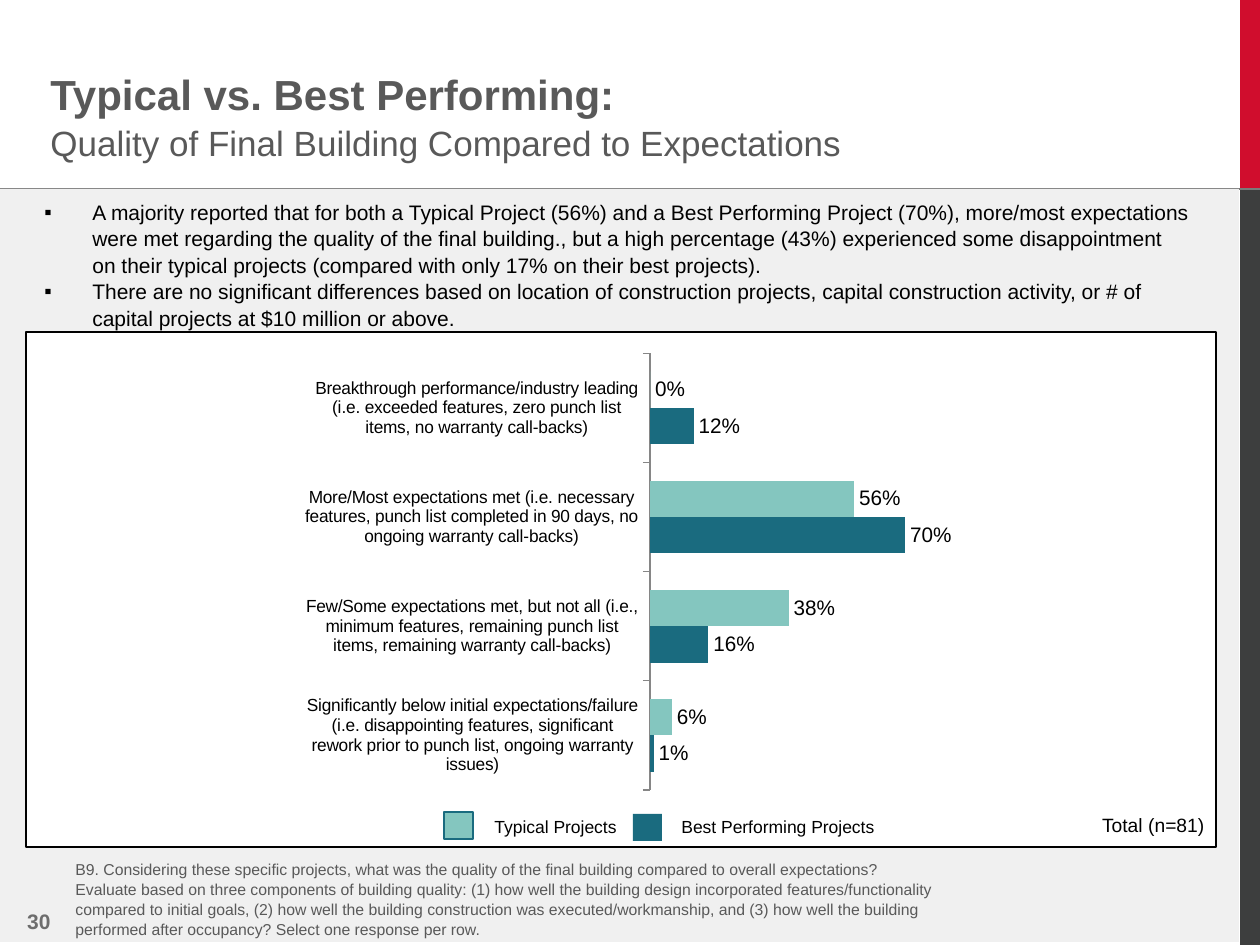
from dataclasses import dataclass

from lxml.etree import SubElement
from pptx import Presentation
from pptx.chart.data import CategoryChartData as ChartData
from pptx.dml.color import RGBColor as Rgb
from pptx.enum.chart import XL_CHART_TYPE as Kind
from pptx.enum.chart import XL_LABEL_POSITION as Spot
from pptx.enum.chart import XL_TICK_MARK as Tick
from pptx.enum.shapes import MSO_CONNECTOR as Link
from pptx.enum.shapes import MSO_SHAPE as Shape
from pptx.enum.text import PP_ALIGN as Align
from pptx.oxml.ns import qn
from pptx.util import Emu, Pt

SCALE = 914400 / 126  # EMU in one px


@dataclass(frozen=True)
class Theme:
    font: str = "Arial"
    ink: str = "000000"
    gray: str = "595959"
    folio: str = "6D6D6D"
    rule: str = "7A7A7A"
    axis: str = "868686"
    paper: str = "FFFFFF"
    band: str = "F0F0F0"
    red: str = "D00D2D"
    dark: str = "3D3E3E"
    light: str = "84C6BF"
    deep: str = "1A6B7F"
    head: int = 24
    sub: int = 20
    body: int = 12
    total: int = 11
    small: int = 10
    note: int = 9
    lead: float = 1.05


T = Theme()

TITLE = "Typical vs. Best Performing:"
TOPIC = "Quality of Final Building Compared to Expectations"
POINTS = [
    "A majority reported that for both a Typical Project (56%) and a Best Performing "
    "Project (70%), more/most expectations were met regarding the quality of the final "
    "building., but a high percentage (43%) experienced some disappointment on their "
    "typical projects (compared with only 17% on their best projects).",
    "There are no significant differences based on location of construction projects, "
    "capital construction activity, or # of capital projects at $10 million or above.",
]
NOTES = [
    "B9. Considering these specific projects, what was the quality of the final building "
    "compared to overall expectations?",
    "Evaluate based on three components of building quality: (1) how well the building "
    "design incorporated features/functionality compared to initial goals, (2) how well "
    "the building construction was executed/workmanship, and (3) how well the building "
    "performed after occupancy? Select one response per row.",
]
GRADES = [
    "Breakthrough performance/industry leading (i.e. exceeded features, zero punch list "
    "items, no warranty call-backs)",
    "More/Most expectations met (i.e. necessary features, punch list completed in 90 "
    "days, no ongoing warranty call-backs)",
    "Few/Some expectations met, but not all (i.e., minimum features, remaining punch "
    "list items, remaining warranty call-backs)",
    "Significantly below initial expectations/failure (i.e. disappointing features, "
    "significant rework prior to punch list, ongoing warranty issues)",
]
SERIES = [
    ("Typical Projects", (0, 0.56, 0.38, 0.06), T.light),
    ("Best Performing Projects", (0.12, 0.7, 0.16, 0.01), T.deep),
]


def px(n):
    return Emu(round(n * SCALE))


def place(box):
    return [px(n) for n in box]


def style(font, size, color, bold=False):
    font.name, font.size, font.bold = T.font, Pt(size), bold
    font.color.rgb = Rgb.from_string(color)


def add_rect(slide, box, fill, edge=None):
    rect = slide.shapes.add_shape(Shape.RECTANGLE, *place(box))
    rect.shadow.inherit = False
    rect.fill.solid()
    rect.fill.fore_color.rgb = Rgb.from_string(fill)
    if edge:
        rect.line.color.rgb = Rgb.from_string(edge)
        rect.line.width = Pt(0.75)
    else:
        rect.line.fill.background()


def add_rule(slide, start, end):
    line = slide.shapes.add_connector(Link.STRAIGHT, *place(start + end))
    line.line.color.rgb = Rgb.from_string(T.rule)
    line.line.width = Pt(1)
    SubElement(line._element.spPr, qn("a:effectLst"))


def add_bullet(para, indent):
    props = para._p.get_or_add_pPr()
    props.set("marL", str(px(indent)))
    props.set("indent", str(-px(indent)))
    SubElement(props, qn("a:buFont"), typeface=T.font)
    SubElement(props, qn("a:buChar"), char="▪")


def add_text(slide, box, lines, size, color=T.ink, bold=False, align=Align.LEFT,
             bullet=False, wrap=True, lead=T.lead):
    frame = slide.shapes.add_textbox(*place(box)).text_frame
    frame.word_wrap = wrap
    for i, line in enumerate(lines):
        para = frame.add_paragraph() if i else frame.paragraphs[0]
        para.text = line
        para.alignment = align
        para.line_spacing = lead
        if bullet:
            add_bullet(para, 48)
        style(para.font, size, color, bold)
    return frame


def add_title(slide):
    frame = add_text(slide, (38, 60, 1167, 106), [""], T.head, T.gray)
    para = frame.paragraphs[0]
    head = para.add_run()
    head.text = TITLE
    style(head.font, T.head, T.gray, True)
    para.add_line_break()
    topic = para.add_run()
    topic.text = TOPIC
    style(topic.font, T.sub, T.gray)


def set_plot(chart, **parts):
    area = chart._chartSpace.chart.plotArea
    layout = area.find(qn("c:layout"))
    if layout is None:
        layout = area.makeelement(qn("c:layout"))
        area.insert(0, layout)
    manual = SubElement(layout, qn("c:manualLayout"))
    marks = {"layoutTarget": "inner", "xMode": "edge", "yMode": "edge", **parts}
    for name, val in marks.items():
        SubElement(manual, qn(f"c:{name}"), val=str(val))


def add_bars(slide, box):
    data = ChartData(number_format="0%")
    data.categories = GRADES
    for name, vals, _ in SERIES:
        data.add_series(name, vals)
    chart = slide.shapes.add_chart(Kind.BAR_CLUSTERED, *place(box), data).chart
    style(chart.font, T.body, T.ink)
    chart.has_legend = chart.has_title = False
    set_plot(chart, x=0.517, y=0.037, w=0.449, h=0.842)

    # Axes
    cats, vals = chart.category_axis, chart.value_axis
    cats.reverse_order = True
    cats.major_tick_mark = Tick.OUTSIDE
    cats.format.line.color.rgb = Rgb.from_string(T.axis)
    style(cats.tick_labels.font, T.small, T.ink)
    vals.minimum_scale, vals.maximum_scale = 0, 0.8
    vals.has_major_gridlines = vals.visible = False

    # Bars and labels
    plot = chart.plots[0]
    plot.gap_width, plot.overlap = 100, 0
    plot.vary_by_categories = False
    for bars, (_, _, color) in zip(plot.series, SERIES):
        bars.format.fill.solid()
        bars.format.fill.fore_color.rgb = Rgb.from_string(color)
        labels = bars.data_labels
        labels.show_value = True
        labels.number_format, labels.number_format_is_linked = "0%", False
        labels.position = Spot.OUTSIDE_END
        style(labels.font, T.body, T.ink)


def add_key(slide):
    spots = [(444, 812, 482, T.deep), (633, 814, 669, None)]
    for (name, _, color), (left, top, text, edge) in zip(SERIES, spots):
        add_rect(slide, (left, top, 29, 27), color, edge)
        add_text(slide, (text, 809, 220, 34), [name], T.small, wrap=False)


def main():
    deck = Presentation()
    deck.slide_width, deck.slide_height = px(1260), px(945)
    slide = deck.slides.add_slide(deck.slide_layouts[6])

    # Frame
    add_rect(slide, (1240, 0, 20, 189), T.red)
    add_rect(slide, (1240, 189, 20, 756), T.dark)
    add_rule(slide, (1260, 189), (0, 189))
    add_rect(slide, (0, 189, 1239, 753), T.band)
    add_rect(slide, (26, 332, 1190, 515), T.paper, T.ink)

    # Title, chart and words
    add_title(slide)
    add_bars(slide, (305, 334, 659, 519))
    add_text(slide, (63, 853, 890, 89), NOTES, T.note, T.gray)
    add_text(slide, (32, 192, 1173, 140), POINTS, T.body, bullet=True)
    add_text(slide, (1031, 806, 186, 37), ["Total (n=81)"], T.total, align=Align.RIGHT)
    add_text(slide, (0, 902, 63, 28), ["30"], T.body, T.folio, True, Align.RIGHT, lead=1.0)
    add_key(slide)

    deck.save("out.pptx")


if __name__ == "__main__":
    main()
